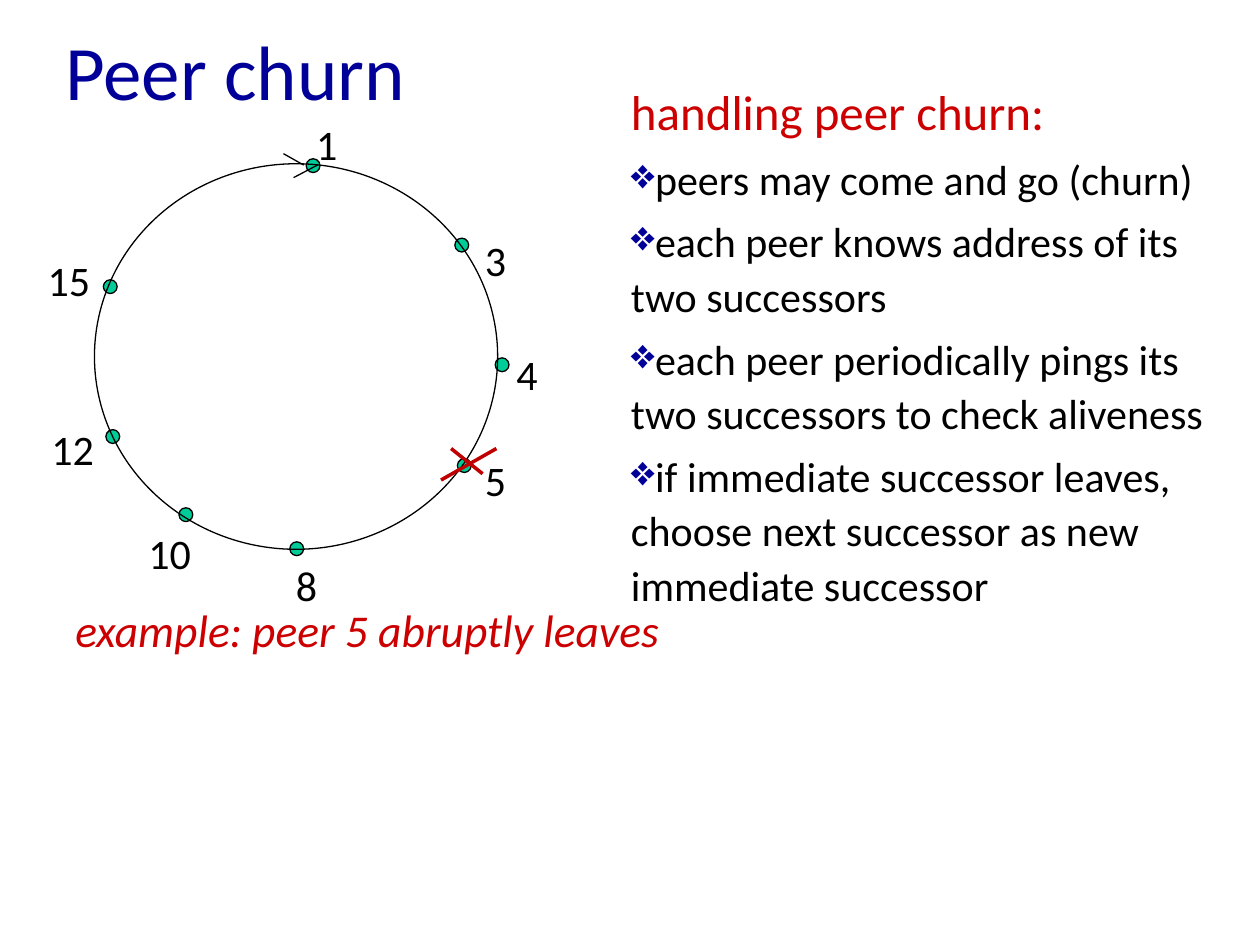
import pptx
import pptx.util
import pptx.dml.color
import pptx.enum.shapes
import pptx.enum.text
import pptx.oxml
import pptx.oxml.ns

Inches = pptx.util.Inches
Pt = pptx.util.Pt

COLOURS = {
    "title": "000099",
    "accent": "CC0000",
    "cross": "C00000",
    "peer": "00CC99",
    "ink": "000000",
}
FONT = "Calibri"
DOT_SIZE = 0.11
LABEL_HEIGHT = 0.5

PEERS = [
    ("1", (2.43, 1.26), (2.41, 0.89)),
    ("3", (3.61, 1.89), (3.75, 1.81)),
    ("4", (3.93, 2.84), (4.0, 2.72)),
    ("5", (3.63, 3.64), (3.75, 3.56)),
    ("8", (2.3, 4.3), (2.25, 4.39)),
    ("10", (1.42, 4.03), (1.08, 4.14)),
    ("12", (0.84, 3.41), (0.31, 3.31)),
    ("15", (0.82, 2.22), (0.28, 1.97)),
]
ARROW_STROKES = [((2.25, 1.22), (2.41, 1.31)), ((2.52, 1.31), (2.33, 1.41))]
CROSS_STROKES = [((3.58, 3.56), (3.83, 3.76)), ((3.94, 3.56), (3.5, 3.81))]
POINTS = [
    "peers may come and go (churn)",
    "each peer knows address of its two successors",
    "each peer periodically pings its two successors to check aliveness",
    "if immediate successor leaves, choose next successor as new immediate successor",
]


def colour(name):
    return pptx.dml.color.RGBColor.from_string(COLOURS[name])


def write(paragraph, text, size=24, color="ink", italic=False, spacing=None):
    run = paragraph.add_run()
    run.text = text
    run.font.name = FONT
    run.font.size = Pt(size)
    run.font.italic = italic
    run.font.color.rgb = colour(color)
    if spacing:
        paragraph.line_spacing = spacing


def add_text(shapes, box, text, middle=False, **text_format):
    shape = shapes.add_textbox(*map(Inches, box))
    frame = shape.text_frame
    frame.word_wrap = True
    if middle:
        frame.vertical_anchor = pptx.enum.text.MSO_ANCHOR.MIDDLE
    write(frame.paragraphs[0], text, **text_format)
    return frame


def add_bullet(frame, text):
    paragraph = frame.add_paragraph()
    write(paragraph, text, spacing=1.08)
    paragraph.space_before = Pt(4.8)
    properties = paragraph._p.get_or_add_pPr()
    properties.set("marL", "0")
    properties.set("indent", str(-Inches(0.12)))
    namespace = pptx.oxml.ns.nsdecls("a")
    for markup in (
        f'<a:buClr {namespace}><a:srgbClr val="{COLOURS["title"]}"/></a:buClr>',
        f'<a:buChar {namespace} char="❖"/>',
    ):
        properties.append(pptx.oxml.parse_xml(markup))


def add_ellipse(shapes, left, top, width, height, fill=None):
    shape = shapes.add_shape(
        pptx.enum.shapes.MSO_SHAPE.OVAL, *map(Inches, (left, top, width, height))
    )
    shape.shadow.inherit = False
    if fill:
        shape.fill.solid()
        shape.fill.fore_color.rgb = colour(fill)
    else:
        shape.fill.background()
    shape.line.color.rgb = colour("ink")
    shape.line.width = Pt(0.75)


def add_line(shapes, start, end, color, width):
    line = shapes.add_connector(
        pptx.enum.shapes.MSO_CONNECTOR.STRAIGHT, *map(Inches, (*start, *end))
    )
    line.line.color.rgb = colour(color)
    line.line.width = Pt(width)
    line._element.spPr.append(
        pptx.oxml.parse_xml(f'<a:effectLst {pptx.oxml.ns.nsdecls("a")}/>')
    )


def add_peer_ring(slide):
    shapes = slide.shapes.add_group_shape().shapes
    for label, dot, label_position in PEERS:
        add_ellipse(shapes, *dot, DOT_SIZE, DOT_SIZE, fill="peer")
        label_width = 0.39 if len(label) == 1 else 0.58
        add_text(shapes, (*label_position, label_width, LABEL_HEIGHT), label)
    add_ellipse(shapes, 0.75, 1.3, 3.2, 3.06)


def main():
    presentation = pptx.Presentation()
    presentation.slide_width = Inches(10)
    presentation.slide_height = Inches(7.5)
    slide = presentation.slides.add_slide(presentation.slide_layouts[6])
    shapes = slide.shapes

    add_text(shapes, (0.42, 0, 9, 1.11), "Peer churn", middle=True, size=44, color="title")
    add_text(shapes, (0.5, 4.78, 9, 2.33), "example: peer 5 abruptly leaves",
             size=26, color="accent", italic=True, spacing=0.9)
    add_peer_ring(slide)
    for start, end in ARROW_STROKES:
        add_line(shapes, start, end, "ink", 0.75)
    for start, end in CROSS_STROKES:
        add_line(shapes, start, end, "cross", 2)

    handling = add_text(shapes, (4.91, 0.6, 4.84, 4.66), "handling peer churn:",
                        size=28, color="accent")
    for point in POINTS:
        add_bullet(handling, point)

    presentation.save("out.pptx")


if __name__ == "__main__":
    main()
